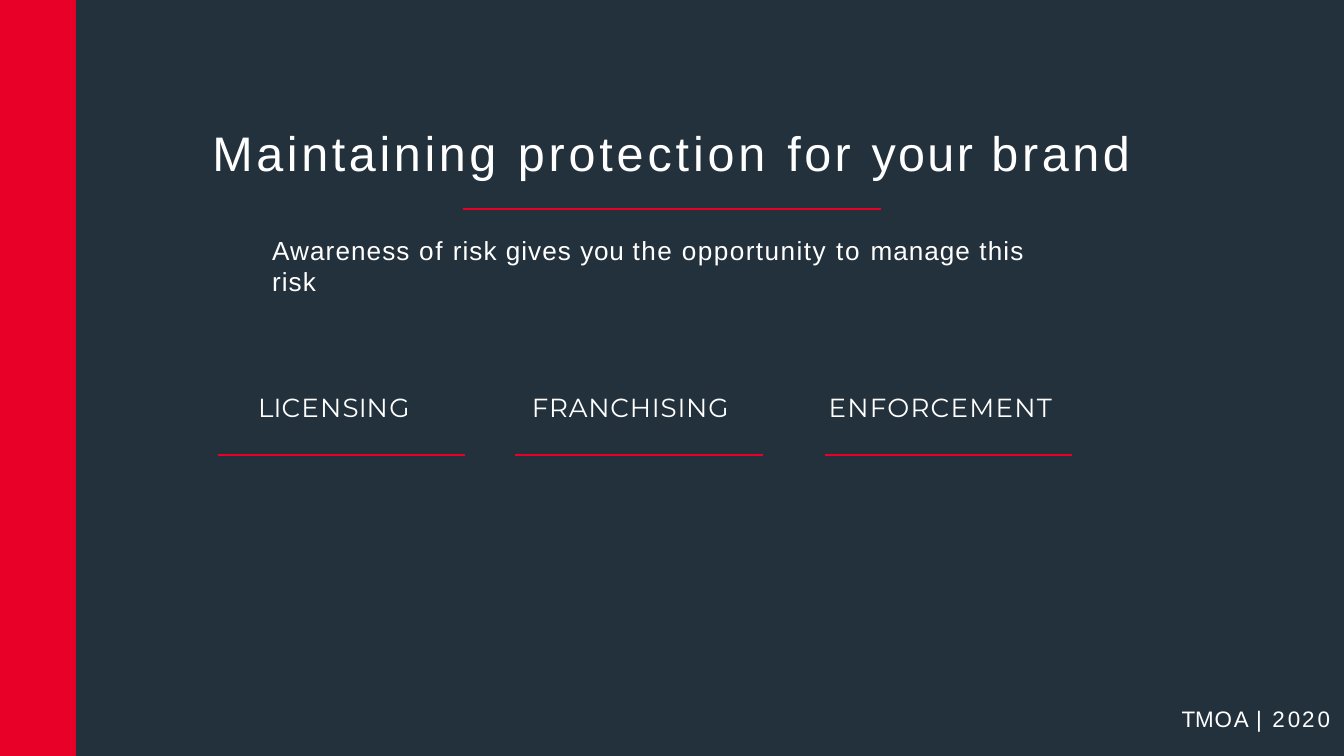
from lxml.etree import SubElement
from pptx import Presentation
from pptx.dml.color import RGBColor
from pptx.enum.shapes import MSO_CONNECTOR, MSO_SHAPE
from pptx.enum.text import MSO_ANCHOR, MSO_AUTO_SIZE, PP_ALIGN
from pptx.oxml.ns import qn
from pptx.util import Cm, Pt

HUES = {"dark": "23313C", "red": "E90029", "white": "FFFFFF"}
WIDE, HIGH, BAR = 50.8, 28.58, 2.87

TITLE = [("Maintaining ", 3.9), ("protection ", 4.2), ("for ", 3.8),
         ("your ", 2.6), ("brand", 3.9)]
CLAIM = [("Awareness ", 1.2), ("of ", 1.7), ("risk gives ", 1.1), ("you ", 0.8),
         ("the opportunity ", 1.6), ("to ", 1.9), ("manage ", 1.1),
         ("this ", 1.3), ("risk", 1.1)]
TOPICS = [
    {"runs": [("L", 0.1), ("I", -0.5), ("C", 1.1), ("E", 1.4), ("N", 1.5),
              ("S", 0), ("I", -0.5), ("N", 1.5), ("G", -0.1)],
     "left": 9.73, "width": 6.32, "rule": 8.23},
    {"runs": [("FRANCHISING", 0.9)], "left": 20.07, "width": 8.18, "rule": 19.48},
    {"runs": [("ENFORCEMENT", 1.4)], "left": 31.29, "width": 9.09, "rule": 31.17},
]
FOOTER = [("T", -2.2), ("M", 0.7), ("O", 2.1), ("A\t", -1.2), ("|\t", 0.7),
          ("2", 3.3), ("0", 1.9), ("2", 3.3), ("0", 0.1)]
TABS = [2.82, 3.43]


def hue(name):
    """Return a named colour."""
    return RGBColor.from_string(HUES[name])


def write(shape, box, runs, size, font="Arial", before=0):
    """Place a shape and fill it with spaced runs."""
    shape.left, shape.top, shape.width, shape.height = map(Cm, box)
    frame = shape.text_frame
    frame.word_wrap = True
    frame.auto_size = MSO_AUTO_SIZE.NONE
    frame.vertical_anchor = MSO_ANCHOR.TOP
    frame.margin_left = frame.margin_right = frame.margin_bottom = 0
    frame.margin_top = Cm(0.02 if before else 0)
    para = frame.paragraphs[0]
    para.alignment = PP_ALIGN.LEFT
    para.space_before = Pt(before)
    para._p.get_or_add_pPr().set("marL", str(Cm(0.03)))
    for text, gap in runs:
        run = para.add_run()
        run.text = text
        run.font.size = Pt(size)
        run.font.name = font
        run.font.color.rgb = hue("white")
        run.font._element.set("spc", str(round(gap * 100)))
    return para


def rule(slide, left, top, width):
    """Draw a red horizontal line."""
    line = slide.shapes.add_connector(
        MSO_CONNECTOR.STRAIGHT, Cm(left), Cm(top), Cm(left + width), Cm(top))
    line.line.color.rgb = hue("red")
    line.line.width = Pt(2.08)
    SubElement(line._element.spPr, qn("a:effectLst"))


def main():
    """Build the slide."""
    deck = Presentation()
    deck.slide_width, deck.slide_height = Cm(WIDE), Cm(HIGH)
    slide = deck.slides.add_slide(deck.slide_layouts[5])
    slide.background.fill.solid()
    slide.background.fill.fore_color.rgb = hue("dark")

    bar = slide.shapes.add_shape(MSO_SHAPE.RECTANGLE, 0, 0, Cm(BAR), Cm(HIGH))
    bar.shadow.inherit = False
    bar.fill.solid()
    bar.fill.fore_color.rgb = hue("red")
    bar.line.fill.background()

    def label(*args, **more):
        """Write into a new text box."""
        return write(slide.shapes.add_textbox(0, 0, 0, 0), *args, **more)

    write(slide.shapes.title, (8, 4.62, 34.8, 2.26), TITLE, 52, before=0.9)
    rule(slide, 17.5, 7.9, 15.8)
    label((10.26, 8.84, 30.25, 1.24), CLAIM, 28, before=0.9)
    for topic in TOPICS:
        label((topic["left"], 14.76, topic["width"], 1.27), topic["runs"], 28,
              font="Montserrat", before=1.1)
        rule(slide, topic["rule"], 17.2, 9.35)

    para = label((44.63, 26.82, 5.66, 0.91), FOOTER, 24)
    para.line_spacing = Pt(23.8)
    stops = SubElement(para._p.get_or_add_pPr(), qn("a:tabLst"))
    for stop in TABS:
        SubElement(stops, qn("a:tab"), pos=str(Cm(stop)), algn="l")
    deck.save("out.pptx")


if __name__ == "__main__":
    main()
